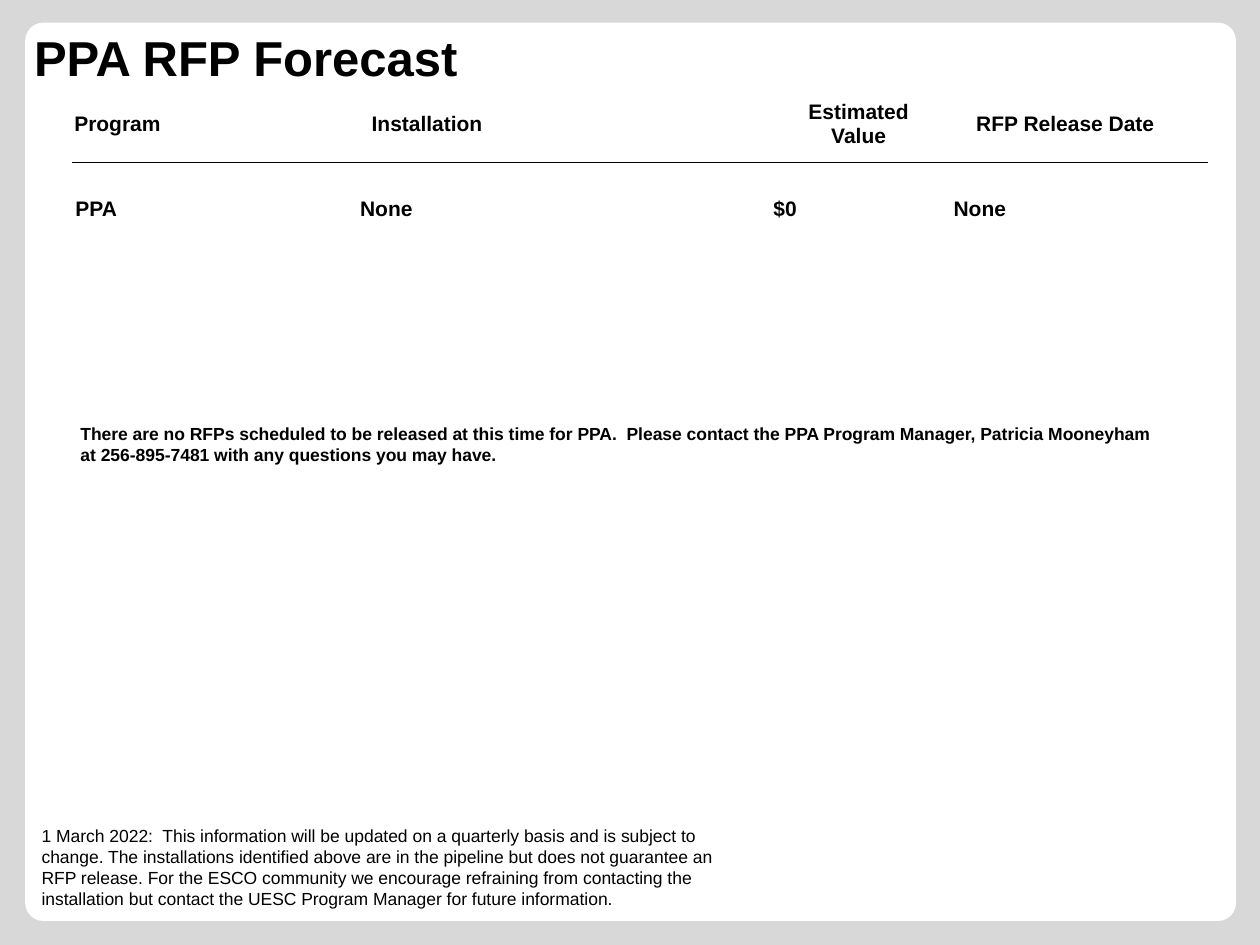
from dataclasses import dataclass

import lxml.etree
import pptx
import pptx.dml.color
import pptx.enum.shapes
import pptx.enum.text
import pptx.oxml.ns
import pptx.util

ALIGN = pptx.enum.text.PP_ALIGN
ANCHOR = pptx.enum.text.MSO_ANCHOR
AUTO = pptx.enum.text.MSO_AUTO_SIZE
FONT = "Arial"
BLACK, WHITE, GRAY = "000000", "FFFFFF", "D8D8D8"
COLS, ROWS = 100, 75  # grid over the whole slide

prs = pptx.Presentation()
prs.slide_width = pptx.util.Inches(10)
prs.slide_height = pptx.util.Inches(7.5)


@dataclass
class Box:
    left: float
    top: float
    width: float
    height: float

    def emu(self) -> tuple:
        return cols(self.left), rows(self.top), cols(self.width), rows(self.height)


@dataclass
class Note:
    box: Box
    text: str
    size: float = 10
    bold: bool = True
    inset: float = 1
    tabs: tuple = ()


@dataclass
class Column:
    width: float
    header: str
    align: ALIGN = ALIGN.LEFT


CARD = Box(2, 1.8, 96.1, 71.3)
TITLE = Box(1.7, 1.7, 36, 5.7)
TABLE = Box(5.8, 6.7, 90, 22.4)
ROW_HEIGHTS = (6.2, 5.6, 10.6)
COLUMNS = (
    Column(23.6, "Program"),
    Column(33.6, "Installation"),
    Column(10.3, "Estimated Value", ALIGN.CENTER),
    Column(22.5, "RFP Release Date", ALIGN.CENTER),
)
NOTES = (
    Note(Box(3.3, 65, 54.2, 7.7),
         "1 March 2022:  This information will be updated on a quarterly basis and is "
         "subject to change. The installations identified above are in the pipeline but "
         "does not guarantee an RFP release. For the ESCO community we encourage "
         "refraining from contacting the installation but contact the UESC Program "
         "Manager for future information.", bold=False, inset=0),
    Note(Box(5.4, 33.1, 88.3, 4.4),
         "There are no RFPs scheduled to be released at this time for PPA.  Please contact "
         "the PPA Program Manager, Patricia Mooneyham at 256-895-7481 with any questions "
         "you may have."),
    Note(Box(5, 15, 87.5, 3), "PPA\tNone\t$0\tNone", size=12, tabs=(22.6, 55.4, 69.7)),
)


def cols(n: float) -> int:
    return round(prs.slide_width * n / COLS)


def rows(n: float) -> int:
    return round(prs.slide_height * n / ROWS)


def rgb(color: str) -> pptx.dml.color.RGBColor:
    return pptx.dml.color.RGBColor.from_string(color)


def write(tf, text: str, *, size: float, bold: bool = True, color: str = BLACK,
          align: ALIGN = ALIGN.LEFT, tabs: tuple = ()) -> None:
    p = tf.paragraphs[0]
    p.alignment = align
    if tabs:
        tab_list = lxml.etree.SubElement(
            p._p.get_or_add_pPr(), pptx.oxml.ns.qn("a:tabLst"))
        for tab in tabs:
            lxml.etree.SubElement(tab_list, pptx.oxml.ns.qn("a:tab"),
                                  pos=str(cols(tab)), algn="l")
    r = p.add_run()
    r.text = text
    r.font.name, r.font.size, r.font.bold = FONT, pptx.util.Pt(size), bold
    r.font.color.rgb = rgb(color)


def add_card(s, box: Box) -> None:
    sp = s.shapes.add_shape(pptx.enum.shapes.MSO_SHAPE.ROUNDED_RECTANGLE, *box.emu())
    sp.adjustments[0] = 0.02
    sp.shadow.inherit = False
    sp.fill.solid()
    sp.fill.fore_color.rgb = rgb(WHITE)
    sp.line.fill.background()
    s.shapes._spTree.insert(2, sp._element)  # behind the title


def set_title(s, box: Box, text: str) -> None:
    sp = s.shapes.title
    sp.left, sp.top, sp.width, sp.height = box.emu()
    tf = sp.text_frame
    tf.word_wrap = False
    tf.auto_size = AUTO.SHAPE_TO_FIT_TEXT
    tf.vertical_anchor = ANCHOR.TOP
    write(tf, text, size=28)


def add_note(s, note: Note) -> None:
    tf = s.shapes.add_textbox(*note.box.emu()).text_frame
    tf.word_wrap = True
    tf.auto_size = AUTO.SHAPE_TO_FIT_TEXT
    tf.margin_left = tf.margin_right = cols(note.inset)
    write(tf, note.text, size=note.size, bold=note.bold, tabs=note.tabs)


def set_borders(cell, top: str, bottom: str) -> None:
    tc_pr = cell._tc.get_or_add_tcPr()
    for side, color in zip("LRTB", (WHITE, WHITE, top, bottom)):
        ln = lxml.etree.SubElement(tc_pr, pptx.oxml.ns.qn(f"a:ln{side}"),
                                   w=str(pptx.util.Pt(1)))
        fill = lxml.etree.SubElement(ln, pptx.oxml.ns.qn("a:solidFill"))
        lxml.etree.SubElement(fill, pptx.oxml.ns.qn("a:srgbClr"), val=color)


def add_forecast_table(s) -> None:
    table = s.shapes.add_table(len(ROW_HEIGHTS), len(COLUMNS), *TABLE.emu()).table
    table.first_row = table.horz_banding = False
    for i, height in enumerate(ROW_HEIGHTS):
        table.rows[i].height = rows(height)
    for j, column in enumerate(COLUMNS):
        table.columns[j].width = cols(column.width)
        for i in range(len(ROW_HEIGHTS)):
            cell = table.cell(i, j)
            set_borders(cell, BLACK if i == 1 else WHITE, BLACK if i == 0 else WHITE)
            cell.fill.background()
        header = table.cell(0, j)
        header.vertical_anchor = ANCHOR.MIDDLE
        header.margin_left = header.margin_right = header.margin_top = cols(0.1)
        header.margin_bottom = 0
        write(header.text_frame, column.header, size=12, align=column.align)


def main() -> None:
    s = prs.slides.add_slide(prs.slide_layouts[5])
    s.background.fill.solid()
    s.background.fill.fore_color.rgb = rgb(GRAY)
    add_card(s, CARD)
    set_title(s, TITLE, "PPA RFP Forecast")
    add_forecast_table(s)
    for note in NOTES:
        add_note(s, note)
    prs.save("out.pptx")


if __name__ == "__main__":
    main()
